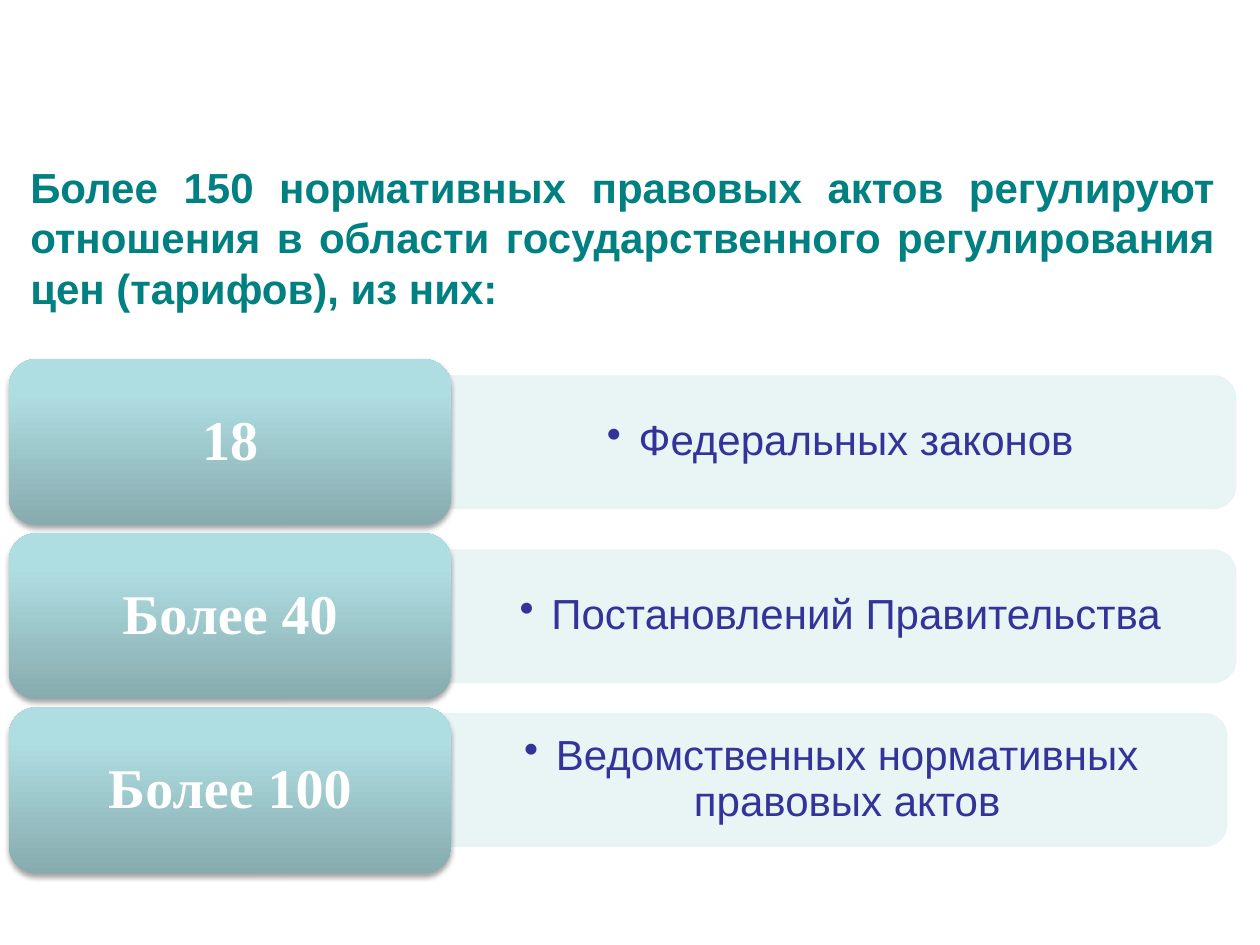
"""Build a slide that counts the legal acts on price regulation by type."""
from copy import deepcopy
from dataclasses import dataclass

from lxml import etree
from pptx import Presentation
from pptx.dml.color import RGBColor
from pptx.enum.shapes import MSO_SHAPE
from pptx.enum.text import MSO_ANCHOR, MSO_AUTO_SIZE, PP_ALIGN
from pptx.oxml.ns import qn
from pptx.util import Cm, Pt

ROUNDED = MSO_SHAPE.ROUNDED_RECTANGLE
ROUNDED_TOP = MSO_SHAPE.ROUND_2_SAME_RECTANGLE
CENTER, JUSTIFY = PP_ALIGN.CENTER, PP_ALIGN.JUSTIFY
TOP, MIDDLE = MSO_ANCHOR.TOP, MSO_ANCHOR.MIDDLE
NO_AUTOFIT = MSO_AUTO_SIZE.NONE

COLORS = {
    "heading": "008080",
    "band": "E7F3F4",
    "band_text": "333399",
    "card_text": "FFFFFF",
    "shadow": "000000",
}
CARD_STOPS = [(0, "87ABAE"), (0.8, "AFDEE2"), (1, "AFE0E4")]

CARD_LEFT, CARD_TOP, CARD_WIDTH, CARD_HEIGHT = 0.18, 7.24, 8.92, 3.35
ROW_PITCH = 3.51
BAND_LEFT, BAND_WIDTH, BAND_HEIGHT = 9.09, 15.82, 2.67
BAND_TEXT_WIDTH, BAND_TEXT_HEIGHT = 15.7, 2.41


@dataclass
class ActGroup:
    """A count of acts, their type and the shift of the band in cm."""

    count: str
    kind: str
    shift_x: float = 0
    shift_y: float = 0


ACT_GROUPS = [
    ActGroup("18", "Федеральных законов"),
    ActGroup("Более 40", "Постановлений Правительства"),
    ActGroup("Более 100", "Ведомственных нормативных правовых актов", -0.18, -0.21),
]


def write_text(shape, text: str, font_name: str, size: int, color: str, bold: bool,
               alignment, anchor, margins: tuple, bulleted: bool = False) -> None:
    """Fill the shape with one formatted paragraph."""
    frame = shape.text_frame
    frame.word_wrap = True
    frame.auto_size = NO_AUTOFIT
    frame.vertical_anchor = anchor
    frame.margin_left = frame.margin_right = Cm(margins[0])
    frame.margin_top = frame.margin_bottom = Cm(margins[1])
    frame.text = text
    paragraph = frame.paragraphs[0]
    paragraph.alignment = alignment
    paragraph.line_spacing = 0.9 if anchor == MIDDLE else 1.0
    if bulleted:
        properties = paragraph._p.get_or_add_pPr()
        properties.set("marL", str(Cm(0.64)))
        properties.set("indent", str(Cm(-0.64)))
        etree.SubElement(properties, qn("a:buChar"), char="•")
    font = paragraph.font
    font.name, font.size, font.bold = font_name, Pt(size), bold
    font.color.rgb = RGBColor.from_string(color)


def set_alpha(fill_element, percent: int) -> None:
    """Set the opacity of the colour in a solid fill."""
    color = fill_element.find(".//" + qn("a:srgbClr"))
    etree.SubElement(color, qn("a:alpha"), val=str(percent * 1000))


def add_band(slide, group: ActGroup, center_y: float) -> None:
    """Draw the pale band on the right and its bulleted text."""
    left = BAND_LEFT + group.shift_x
    center_y += group.shift_y
    band = slide.shapes.add_shape(
        ROUNDED_TOP, Cm(left + (BAND_WIDTH - BAND_HEIGHT) / 2),
        Cm(center_y - BAND_WIDTH / 2), Cm(BAND_HEIGHT), Cm(BAND_WIDTH))
    band.rotation = 90
    band.shadow.inherit = False
    color = RGBColor.from_string(COLORS["band"])
    band.fill.solid()
    band.fill.fore_color.rgb = color
    band.line.color.rgb = color
    band.line.width = Pt(0.75)
    properties = band._element.spPr
    set_alpha(properties.find(qn("a:solidFill")), 90)
    set_alpha(properties.find(qn("a:ln")), 90)

    label = slide.shapes.add_textbox(
        Cm(left), Cm(center_y - BAND_TEXT_HEIGHT / 2),
        Cm(BAND_TEXT_WIDTH), Cm(BAND_TEXT_HEIGHT))
    write_text(label, group.kind, "Arial", 24, COLORS["band_text"], False,
               CENTER, MIDDLE, (0.69, 0.36), bulleted=True)


def add_card(slide, group: ActGroup, top: float) -> None:
    """Draw the shaded card on the left with its count."""
    card = slide.shapes.add_shape(
        ROUNDED, Cm(CARD_LEFT), Cm(top), Cm(CARD_WIDTH), Cm(CARD_HEIGHT))
    card.line.fill.background()
    card.fill.gradient()
    card.fill.gradient_angle = 90
    properties = card._element.spPr
    stop_list = properties.find(".//" + qn("a:gsLst"))
    stop_list.append(deepcopy(stop_list[-1]))
    for stop, (position, color) in zip(card.fill.gradient_stops, CARD_STOPS):
        stop.position = position
        stop.color.rgb = RGBColor.from_string(color)

    card.shadow.inherit = False
    shadow = etree.SubElement(
        properties.find(qn("a:effectLst")), qn("a:outerShdw"),
        blurRad=str(Pt(3.1)), dist=str(Pt(1.8)), dir="5400000", rotWithShape="0")
    shadow_color = etree.SubElement(shadow, qn("a:srgbClr"), val=COLORS["shadow"])
    etree.SubElement(shadow_color, qn("a:alpha"), val="35000")
    write_text(card, group.count, "Times New Roman", 32, COLORS["card_text"], True,
               CENTER, MIDDLE, (0.34, 0.18))


def main() -> None:
    """Build and save the presentation."""
    presentation = Presentation()
    presentation.slide_width, presentation.slide_height = Cm(25.4), Cm(19.05)
    slide = presentation.slides.add_slide(presentation.slide_layouts[5])

    title = slide.shapes.title
    title.left, title.top, title.width, title.height = Cm(0.36), Cm(3.12), Cm(24.38), Cm(3.1)
    write_text(
        title,
        "Более 150 нормативных правовых актов регулируют отношения в области "
        "государственного регулирования цен (тарифов), из них:",
        "Arial", 24, COLORS["heading"], True, JUSTIFY, TOP, (0.25, 0.13))

    for row, group in enumerate(ACT_GROUPS):
        top = CARD_TOP + row * ROW_PITCH
        add_band(slide, group, top + CARD_HEIGHT / 2)
        add_card(slide, group, top)

    presentation.save("out.pptx")


if __name__ == "__main__":
    main()
